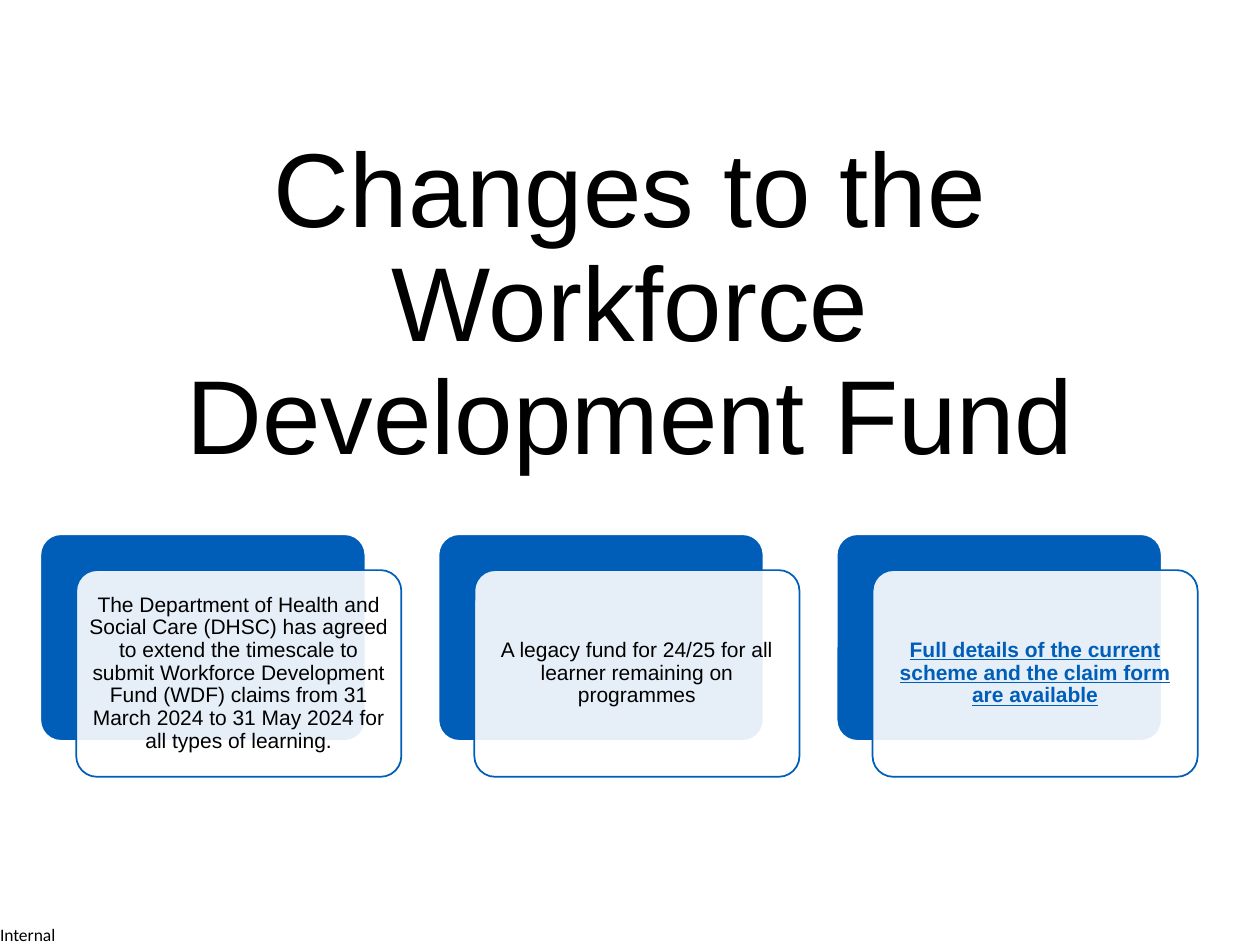
"""Build the Workforce Development Fund slide with three layered cards."""
from dataclasses import dataclass

from lxml.etree import SubElement
from pptx import Presentation
from pptx.dml.color import RGBColor
from pptx.enum.shapes import MSO_SHAPE
from pptx.enum.text import MSO_ANCHOR, PP_ALIGN
from pptx.oxml.ns import qn
from pptx.shapes.autoshape import Shape
from pptx.slide import Slide
from pptx.text.text import TextFrame
from pptx.util import Inches, Pt


@dataclass(frozen=True)
class Theme:
    blue: RGBColor = RGBColor(0x00, 0x5E, 0xB8)
    white: RGBColor = RGBColor(0xFF, 0xFF, 0xFF)
    black: RGBColor = RGBColor(0x00, 0x00, 0x00)
    font: str = "Arial"
    label_font: str = "Calibri"
    title_size: int = 60
    card_size: int = 12
    label_size: int = 10
    opacity: int = 90


@dataclass(frozen=True)
class Grid:
    left: float = 0.32
    top: float = 4.24
    pitch: float = 3.16
    width: float = 2.58
    height: float = 1.64
    offset: float = 0.285


@dataclass(frozen=True)
class Card:
    text: str
    emphasis: bool = False


THEME = Theme()
GRID = Grid()
CARDS = (
    Card("The Department of Health and Social Care (DHSC) has agreed to extend "
         "the timescale to submit Workforce Development Fund (WDF) claims from "
         "31 March 2024 to 31 May 2024 for all types of learning."),
    Card("A legacy fund for 24/25 for all learner remaining on programmes"),
    Card("Full details of the current scheme and the claim form are available",
         emphasis=True),
)


def set_margins(tf: TextFrame, inset: float) -> None:
    tf.margin_left = tf.margin_right = Inches(inset)
    tf.margin_top = tf.margin_bottom = Inches(inset)


def write(tf: TextFrame, text: str, size: int, font: str = THEME.font,
          color: RGBColor = THEME.black, align: PP_ALIGN = PP_ALIGN.CENTER,
          spacing: float = 0.9, emphasis: bool = False) -> None:
    p = tf.paragraphs[0]
    p.alignment = align
    p.line_spacing = spacing
    r = p.add_run()
    r.text = text
    r.font.name = font
    r.font.size = Pt(size)
    r.font.color.rgb = color
    r.font.bold = r.font.underline = emphasis


def add_panel(s: Slide, x: float, y: float, fill: RGBColor, line: RGBColor) -> Shape:
    sp = s.shapes.add_shape(MSO_SHAPE.ROUNDED_RECTANGLE, Inches(x), Inches(y),
                            Inches(GRID.width), Inches(GRID.height))
    sp.adjustments[0] = 0.1
    sp.shadow.inherit = False
    sp.fill.solid()
    sp.fill.fore_color.rgb = fill
    sp.line.color.rgb = line
    sp.line.width = Pt(1)
    return sp


def add_card(s: Slide, column: int, card: Card) -> None:
    x = GRID.left + column * GRID.pitch
    add_panel(s, x, GRID.top, THEME.blue, THEME.white)
    front = add_panel(s, x + GRID.offset, GRID.top + GRID.offset, THEME.white, THEME.blue)
    rgb = front.fill._xPr.find(qn("a:solidFill")).find(qn("a:srgbClr"))
    SubElement(rgb, qn("a:alpha")).set("val", str(THEME.opacity * 1000))
    tf = front.text_frame
    tf.word_wrap = True
    tf.vertical_anchor = MSO_ANCHOR.MIDDLE
    set_margins(tf, 0.05)
    write(tf, card.text, THEME.card_size, emphasis=card.emphasis,
          color=THEME.blue if card.emphasis else THEME.black)


def add_title(s: Slide, text: str) -> None:
    sp = s.shapes.title
    sp.left, sp.top = Inches(1.25), Inches(1.23)
    sp.width, sp.height = Inches(7.5), Inches(2.61)
    sp.text_frame.word_wrap = True
    sp.text_frame.vertical_anchor = MSO_ANCHOR.BOTTOM
    write(sp.text_frame, text, THEME.title_size)


def add_label(s: Slide, text: str) -> None:
    sp = s.shapes.add_textbox(0, Inches(7.33), Inches(0.51), Inches(0.17))
    set_margins(sp.text_frame, 0)
    write(sp.text_frame, text, THEME.label_size, font=THEME.label_font,
          align=PP_ALIGN.LEFT, spacing=1.0)


def main() -> None:
    prs = Presentation()
    prs.slide_width, prs.slide_height = Inches(10), Inches(7.5)
    s = prs.slides.add_slide(prs.slide_layouts[0])
    subtitle = s.placeholders[1].element
    subtitle.getparent().remove(subtitle)
    add_label(s, "Internal")
    add_title(s, "Changes to the Workforce Development Fund")
    for column, card in enumerate(CARDS):
        add_card(s, column, card)
    prs.save("out.pptx")


if __name__ == "__main__":
    main()
